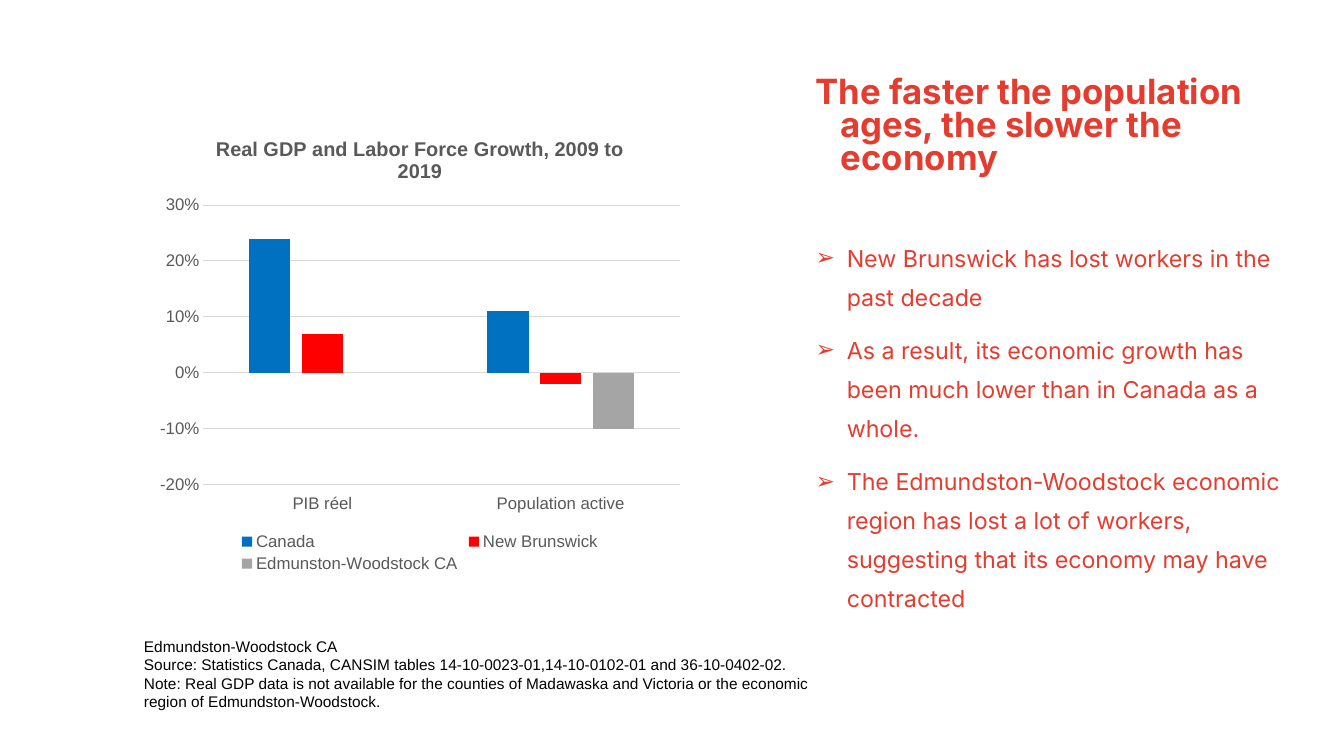
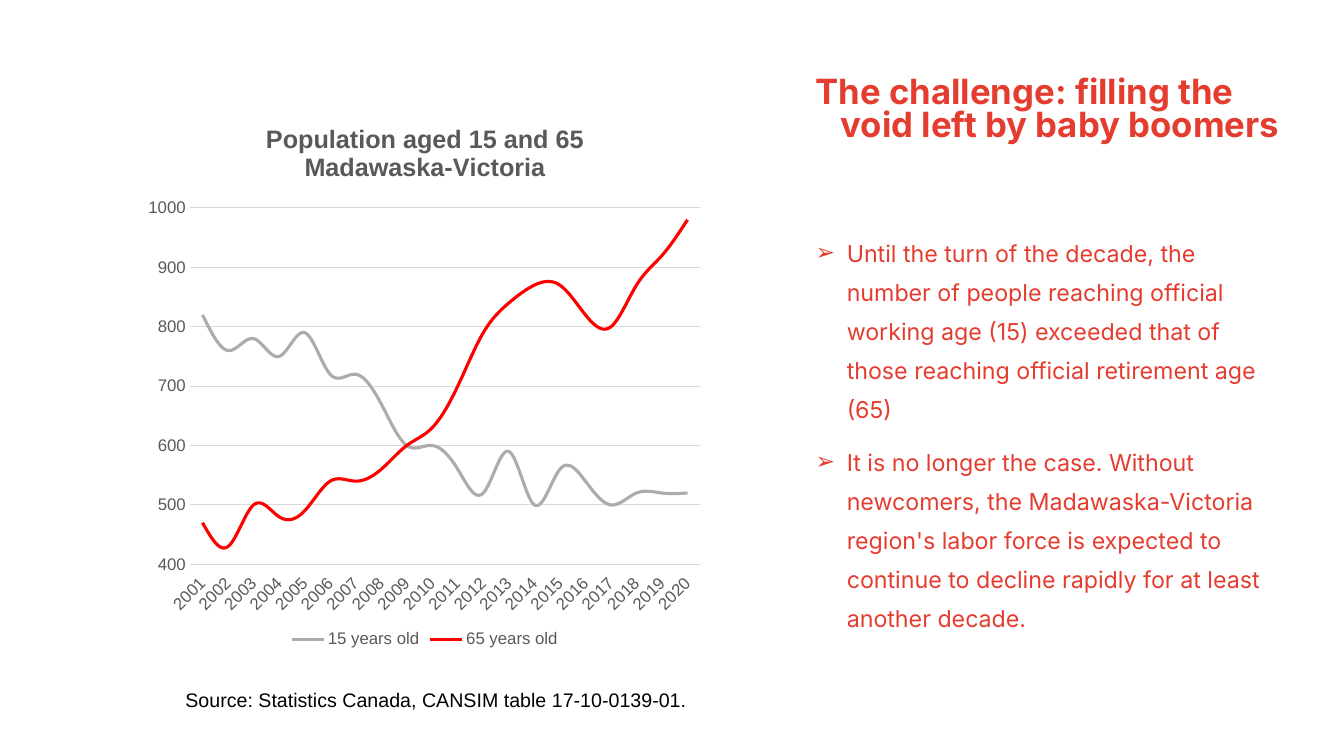
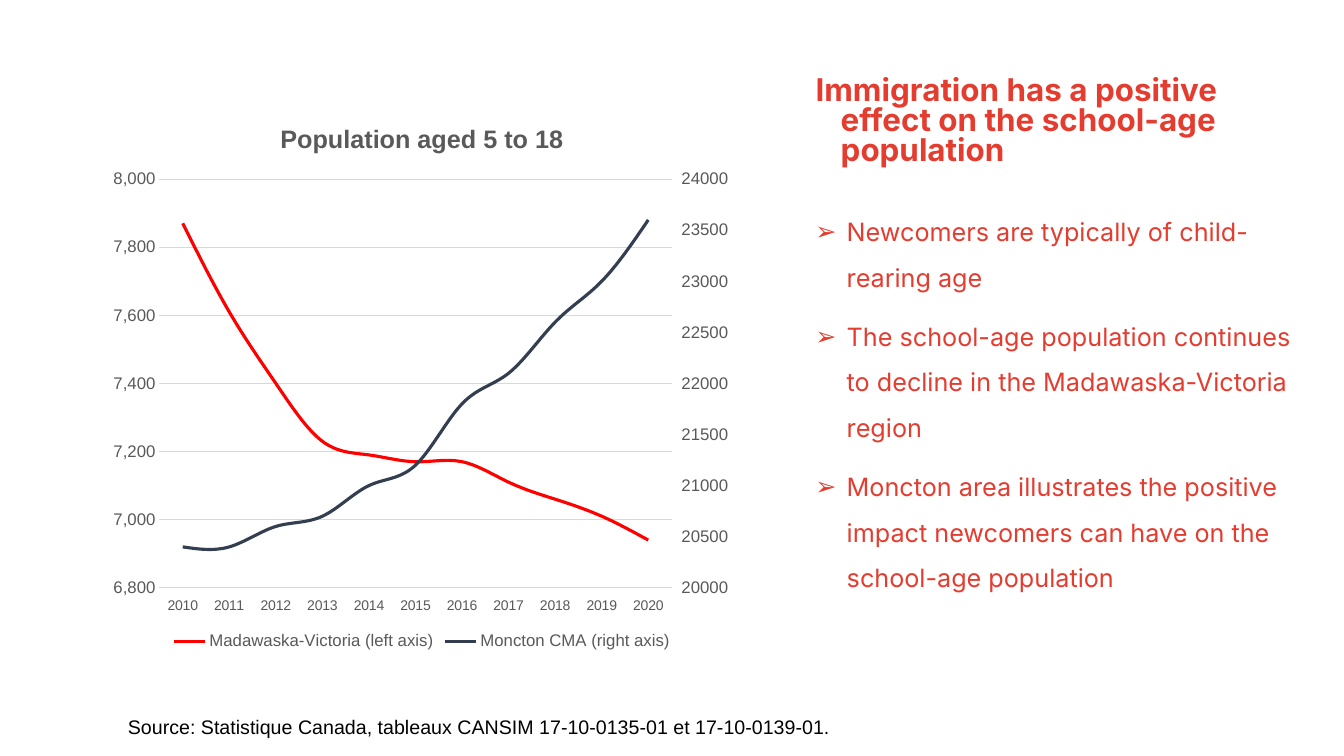
from copy import deepcopy

from lxml import etree
from pptx import Presentation
from pptx.chart.axis import ValueAxis
from pptx.chart.data import CategoryChartData
from pptx.dml.color import RGBColor
from pptx.enum.chart import XL_CHART_TYPE as ChartType
from pptx.enum.chart import XL_LEGEND_POSITION as LegendPos
from pptx.enum.chart import XL_TICK_LABEL_POSITION as LabelPos
from pptx.enum.chart import XL_TICK_MARK as Tick
from pptx.oxml.ns import qn
from pptx.util import Inches, Pt

CORAL = RGBColor(0xE4, 0x3D, 0x30)
BLACK = RGBColor(0, 0, 0)
GRAY_TEXT = RGBColor(0x59, 0x59, 0x59)
GRID = RGBColor(0xD9, 0xD9, 0xD9)
BLUE = RGBColor(0x00, 0x70, 0xC0)
RED = RGBColor(0xFF, 0, 0)
GRAY = RGBColor(0xA5, 0xA5, 0xA5)
LIGHT_GRAY = RGBColor(0xAF, 0xAB, 0xAB)
NAVY = RGBColor(0x33, 0x3F, 0x50)

HEAD_FONT = "Inter"
BASE_FONT = "Arial"
TEXT_LEFT = 7.74


def set_font(font, name, size, color, bold=False):
    font.name, font.size, font.bold = name, Pt(size), bold
    font.color.rgb = color


def add_text(slide, box, lines, name, size, color, bold=False,
             spacing=None, before=0, indent=None, bullet=None):
    tf = slide.shapes.add_textbox(*map(Inches, box)).text_frame
    tf.word_wrap = True
    for i, line in enumerate(lines):
        p = tf.paragraphs[0] if i == 0 else tf.add_paragraph()
        pPr = p._p.get_or_add_pPr()
        if indent:
            pPr.set("marL", str(Inches(indent[0])))
            pPr.set("indent", str(Inches(indent[1])))
        if bullet:
            clr = etree.SubElement(pPr, qn("a:buClr"))
            etree.SubElement(clr, qn("a:srgbClr"), val=str(color))
            etree.SubElement(pPr, qn("a:buFont"), typeface=BASE_FONT)
            etree.SubElement(pPr, qn("a:buChar"), char=bullet)
        if spacing:
            p.line_spacing = spacing
        if i and before:
            p.space_before = Pt(before)
        r = p.add_run()
        r.text = line
        set_font(r.font, name, size, color, bold)


def add_title(slide, text, size=24.8):
    add_text(slide, (TEXT_LEFT, 0.72, 5.09, 1.3), [text], HEAD_FONT, size, CORAL,
             bold=True, spacing=0.8, indent=(0.5, -0.25))


def add_bullets(slide, top, width, height, lines, size=16.6, spacing=1.4):
    add_text(slide, (TEXT_LEFT, top, width, height), lines, HEAD_FONT, size, CORAL,
             spacing=spacing, before=10, indent=(0.56, -0.31), bullet="➢")


def add_source(slide, box, lines, size=14):
    add_text(slide, box, lines, BASE_FONT, size, BLACK)


def style_value_axis(axis, low, high, step, fmt):
    axis.minimum_scale, axis.maximum_scale, axis.major_unit = low, high, step
    axis.major_tick_mark = axis.minor_tick_mark = Tick.NONE
    axis.format.line.fill.background()
    labels = axis.tick_labels
    labels.number_format, labels.number_format_is_linked = fmt, False
    set_font(labels.font, BASE_FONT, 12, GRAY_TEXT)


def place_plot(chart, fractions):
    plot_area = chart._chartSpace.chart.plotArea
    for old in plot_area.findall(qn("c:layout")):
        plot_area.remove(old)
    layout = etree.Element(qn("c:layout"))
    plot_area.insert(0, layout)
    manual = etree.SubElement(layout, qn("c:manualLayout"))
    settings = [("layoutTarget", "inner"), ("xMode", "edge"), ("yMode", "edge")]
    settings += zip("xywh", fractions)
    for tag, val in settings:
        etree.SubElement(manual, qn(f"c:{tag}"), val=str(val))


def add_chart(slide, kind, box, plot, title, title_size, cats, series, scale, cat_size=12):
    data = CategoryChartData()
    data.categories = cats
    for name, vals, _ in series:
        data.add_series(name, vals)
    chart = slide.shapes.add_chart(kind, *map(Inches, box), data).chart
    set_font(chart.font, BASE_FONT, 12, GRAY_TEXT)

    tf = chart.chart_title.text_frame
    for i, line in enumerate(title):
        p = tf.paragraphs[0] if i == 0 else tf.add_paragraph()
        r = p.add_run()
        r.text = line
        set_font(r.font, BASE_FONT, title_size, GRAY_TEXT, True)
    chart.chart_title.include_in_layout = False

    chart.has_legend = True
    chart.legend.position = LegendPos.BOTTOM
    chart.legend.include_in_layout = False
    set_font(chart.legend.font, BASE_FONT, 12, GRAY_TEXT)

    cat_axis, val_axis = chart.category_axis, chart.value_axis
    cat_axis.major_tick_mark = cat_axis.minor_tick_mark = Tick.NONE
    cat_axis.tick_label_position = LabelPos.LOW
    cat_axis.format.line.color.rgb = GRID
    cat_axis.format.line.width = Pt(0.75)
    set_font(cat_axis.tick_labels.font, BASE_FONT, cat_size, GRAY_TEXT)
    style_value_axis(val_axis, *scale)
    val_axis.has_major_gridlines = True
    val_axis.major_gridlines.format.line.color.rgb = GRID
    val_axis.major_gridlines.format.line.width = Pt(0.75)

    chart.plots[0].vary_by_categories = False
    for s, (_, _, color) in zip(chart.plots[0].series, series):
        if kind == ChartType.LINE:
            s.smooth = True
            s.format.line.color.rgb = color
            s.format.line.width = Pt(2.25)
        else:
            s.invert_if_negative = False
            s.format.fill.solid()
            s.format.fill.fore_color.rgb = color
    place_plot(chart, plot)
    return chart


def move_last_series_right(chart, scale):
    plot_area = chart._chartSpace.chart.plotArea
    left = plot_area.find(qn("c:lineChart"))
    cat_ax, val_ax = (plot_area.find(qn(tag)) for tag in ("c:catAx", "c:valAx"))
    right, right_cat, right_val = map(deepcopy, (left, cat_ax, val_ax))
    left.remove(left.findall(qn("c:ser"))[-1])
    for ser in right.findall(qn("c:ser"))[:-1]:
        right.remove(ser)
    cat_id, val_id = "50010", "50020"
    for ax, new_id in zip(right.findall(qn("c:axId")), (cat_id, val_id)):
        ax.set("val", new_id)
    for axis, own, other in ((right_cat, cat_id, val_id), (right_val, val_id, cat_id)):
        axis.find(qn("c:axId")).set("val", own)
        axis.find(qn("c:crossAx")).set("val", other)
    right_cat.find(qn("c:delete")).set("val", "1")
    right_val.find(qn("c:axPos")).set("val", "r")
    right_val.find(qn("c:crosses")).set("val", "max")
    left.addnext(right)
    val_ax.addnext(right_val)
    right_val.addnext(right_cat)
    axis = ValueAxis(right_val)
    axis.has_major_gridlines = False
    style_value_axis(axis, *scale)
    axis.major_tick_mark = Tick.OUTSIDE


def growth_slide(slide):
    add_title(slide, "The faster the population ages, the slower the economy")
    add_bullets(slide, 2.26, 5.09, 4.33, [
        "New Brunswick has lost workers in the past decade",
        "As a result, its economic growth has been much lower than in Canada as a whole.",
        "The Edmundston-Woodstock economic region has lost a lot of workers, "
        "suggesting that its economy may have contracted",
    ])
    add_source(slide, (1.33, 6.27, 6.93, 0.84), [
        "Edmundston-Woodstock CA",
        "Source: Statistics Canada, CANSIM tables 14-10-0023-01,14-10-0102-01 and 36-10-0402-02.",
        "Note: Real GDP data is not available for the counties of Madawaska and Victoria "
        "or the economic region of Edmundston-Woodstock.",
    ], size=11)
    chart = add_chart(
        slide, ChartType.COLUMN_CLUSTERED, (1.48, 1.17, 5.37, 4.55), (0.1, 0.19, 0.88, 0.61),
        ["Real GDP and Labor Force Growth, 2009 to 2019"], 14.2,
        ["PIB réel", "Population active"],
        [("Canada", (0.24, 0.11), BLUE),
         ("New Brunswick", (0.07, -0.02), RED),
         ("Edmunston-Woodstock CA", (None, -0.1), GRAY)],
        (-0.2, 0.3, 0.1, "0%"))
    chart.plots[0].gap_width = 219
    chart.plots[0].overlap = -27


def challenge_slide(slide):
    add_title(slide, "The challenge: filling the void left by baby boomers")
    add_bullets(slide, 2.21, 5.09, 4.57, [
        "Until the turn of the decade, the number of people reaching official working age (15) "
        "exceeded that of those reaching official retirement age (65)",
        "It is no longer the case. Without newcomers, the Madawaska-Victoria region's labor "
        "force is expected to continue to decline rapidly for at least another decade.",
    ])
    add_source(slide, (1.74, 6.78, 9.36, 0.34),
               ["Source: Statistics Canada, CANSIM table 17-10-0139-01."])
    chart = add_chart(
        slide, ChartType.LINE, (1.37, 1.03, 5.69, 5.44), (0.09, 0.19, 0.89, 0.65),
        ["Population aged 15 and 65", "Madawaska-Victoria"], 18,
        [str(year) for year in range(2001, 2021)],
        [("15 years old", (820, 760, 780, 750, 790, 720, 720, 670, 600, 600,
                           560, 520, 590, 500, 560, 540, 500, 520, 520, 520), LIGHT_GRAY),
         ("65 years old", (470, 430, 500, 480, 490, 540, 540, 560, 600, 630,
                           700, 790, 840, 870, 870, 820, 800, 870, 920, 980), RED)],
        (400, 1000, 100, "General"))
    for body in chart._chartSpace.xpath(".//c:catAx/c:txPr/a:bodyPr"):
        body.set("rot", str(-45 * 60000))


def immigration_slide(slide):
    add_title(slide, "Immigration has a positive effect on the school-age population", 22.4)
    add_bullets(slide, 1.95, 5.27, 4.78, [
        "Newcomers are typically of child-rearing age",
        "The school-age population continues to decline in the Madawaska-Victoria region",
        "Moncton area illustrates the positive impact newcomers can have on the "
        "school-age population",
    ], size=18, spacing=1.5)
    chart = add_chart(
        slide, ChartType.LINE, (1.01, 1.01, 6.35, 5.48), (0.09, 0.14, 0.8, 0.74),
        ["Population aged 5 to 18"], 18,
        [str(year) for year in range(2010, 2021)],
        [("Madawaska-Victoria (left axis)",
          (7870, 7610, 7400, 7230, 7190, 7170, 7170, 7110, 7060, 7010, 6940), RED),
         ("Moncton CMA (right axis)",
          (20400, 20400, 20600, 20700, 21000, 21200, 21800, 22100, 22600, 23000, 23600), NAVY)],
        (6800, 8000, 200, "#,##0"), cat_size=10)
    move_last_series_right(chart, (20000, 24000, 500, "General"))
    add_source(slide, (1.17, 7.04, 9.36, 0.34),
               ["Source: Statistique Canada, tableaux CANSIM 17-10-0135-01 et 17-10-0139-01."])


def main():
    prs = Presentation()
    prs.slide_width, prs.slide_height = Inches(13.33), Inches(7.5)
    for build in (growth_slide, challenge_slide, immigration_slide):
        build(prs.slides.add_slide(prs.slide_layouts[6]))
    prs.save("out.pptx")


if __name__ == "__main__":
    main()
